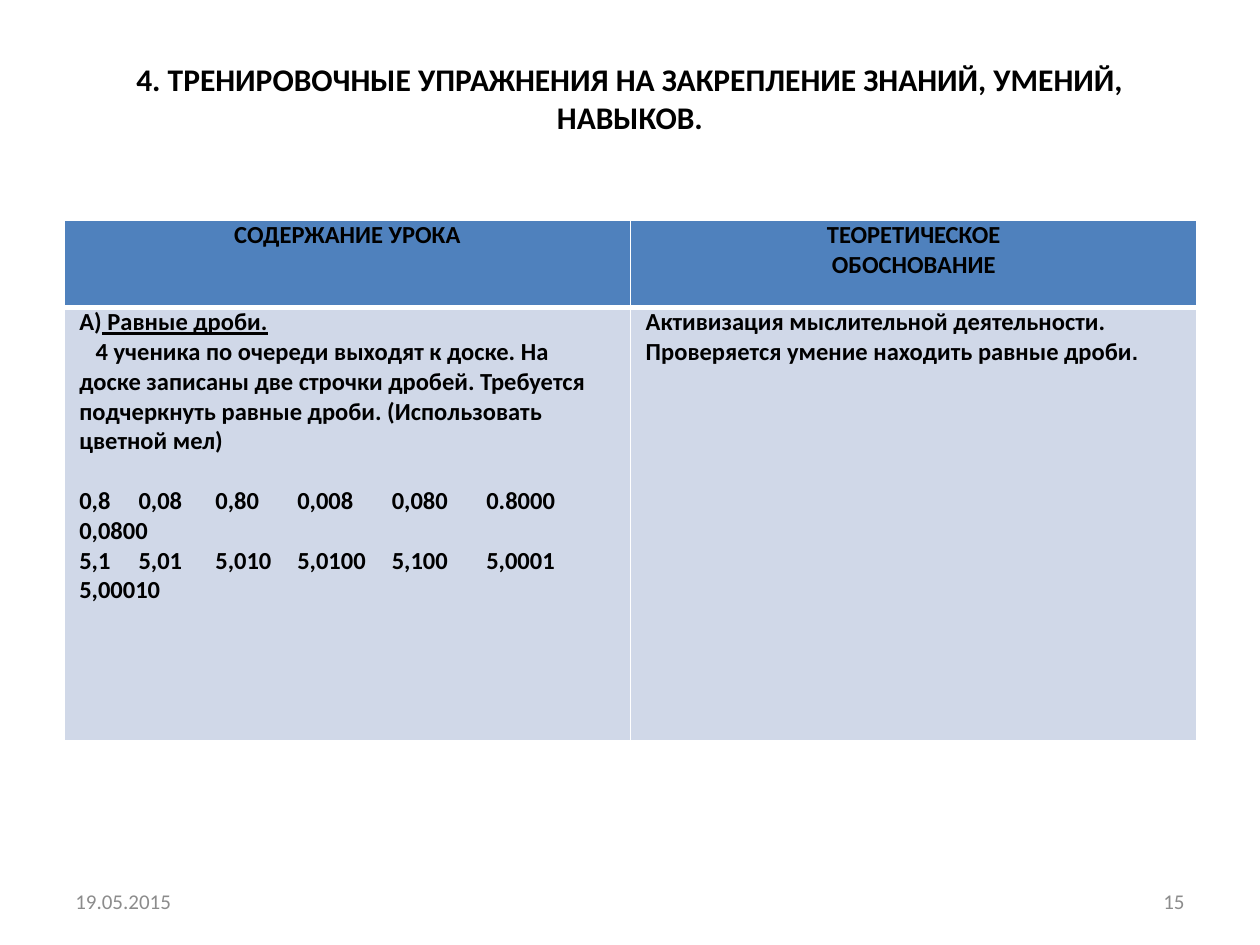
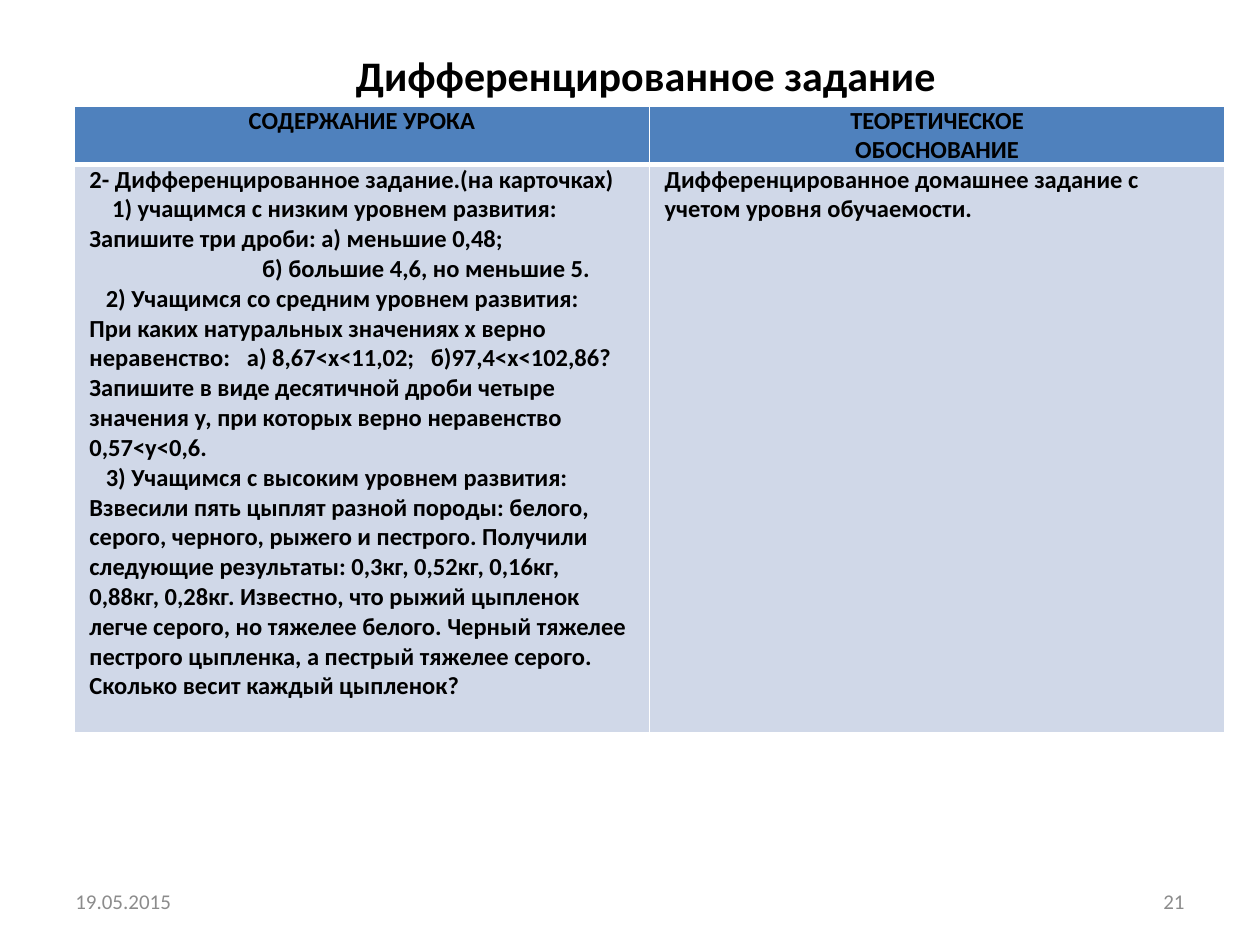
from dataclasses import dataclass

from lxml.etree import SubElement
from pptx import Presentation
from pptx.dml.color import RGBColor
from pptx.enum.text import MSO_ANCHOR as Anchor, PP_ALIGN as Align
from pptx.oxml.ns import qn
from pptx.util import Inches, Pt


@dataclass(frozen=True)
class Theme:
    font: str = "Calibri"
    stop_font: str = "Arial"
    ink: str = "000000"
    muted: str = "8C8C8C"
    header_fill: str = "4F81BD"
    body_fill: str = "D0D8E8"
    border: str = "FFFFFF"
    body_size: int = 14
    footer_size: int = 12
    thin: int = 1
    thick: int = 3


THEME = Theme()
DATE = "19.05.2015"
HEADERS = (("СОДЕРЖАНИЕ УРОКА",), ("ТЕОРЕТИЧЕСКОЕ", "ОБОСНОВАНИЕ"))
FRACTION_TABS = (0.47, 1.08, 1.73, 2.48, 3.23)
INEQUALITY_TABS = (1.25, 2.71)


@dataclass(frozen=True)
class Line:
    """One paragraph: its text, spacing and an optional run at its end."""
    text: str
    indent: float = 0
    before: int = 0
    tabs: tuple = ()
    underlined: str = ""
    small_stop: str = ""


def style_run(run, size, color=THEME.ink, bold=False, font=THEME.font):
    run.font.name = font
    run.font.size = Pt(size)
    run.font.bold = bold
    run.font.color.rgb = RGBColor.from_string(color)


def add_text(slide, box, text, size, color=THEME.ink, bold=False,
             align=Align.LEFT, bottom_inset=0.05):
    shape = slide.shapes.add_textbox(*map(Inches, box))
    frame = shape.text_frame
    frame.word_wrap = True
    frame.vertical_anchor = Anchor.MIDDLE
    frame.margin_bottom = Inches(bottom_inset)
    frame.text = text
    paragraph = frame.paragraphs[0]
    paragraph.alignment = align
    for run in paragraph.runs:
        style_run(run, size, color, bold)


def add_footer(slide, number, box=(0.5, 6.95, 9, 0.4)):
    left, top, width, height = box
    field = 2.33
    for x, text, align in ((left, DATE, Align.LEFT),
                           (left + width - field, number, Align.RIGHT)):
        add_text(slide, (x, top, field, height), text,
                 THEME.footer_size, THEME.muted, align=align)


def set_borders(cell, **widths):
    properties = cell._tc.get_or_add_tcPr()
    for position, side in enumerate("LRTB"):
        line = SubElement(properties, qn(f"a:ln{side}"),
                          w=str(Pt(widths.get(side, THEME.thin))))
        fill = SubElement(line, qn("a:solidFill"))
        SubElement(fill, qn("a:srgbClr"), val=THEME.border)
        properties.insert(position, line)


def write_line(paragraph, line, align):
    properties = paragraph._p.get_or_add_pPr()
    if line.indent:
        properties.set("marL", "0")
        properties.set("indent", str(Inches(line.indent)))
    if line.tabs:
        tab_list = SubElement(properties, qn("a:tabLst"))
        for stop in line.tabs:
            SubElement(tab_list, qn("a:tab"), pos=str(Inches(stop)), algn="l")
    paragraph.alignment = align
    if line.before:
        paragraph.space_before = Pt(line.before)
    paragraph.text = line.text
    for run in paragraph.runs:
        style_run(run, THEME.body_size, bold=True)
    if line.underlined:
        run = paragraph.add_run()
        run.text = line.underlined
        style_run(run, THEME.body_size, bold=True)
        run.font.underline = True
    if line.small_stop:
        run = paragraph.add_run()
        run.text = line.small_stop
        style_run(run, THEME.footer_size, bold=True, font=THEME.stop_font)


def fill_cell(cell, lines, fill, side_inset, align=Align.LEFT):
    cell.margin_left = cell.margin_right = Inches(side_inset)
    cell.margin_top = cell.margin_bottom = 0
    cell.fill.solid()
    cell.fill.fore_color.rgb = RGBColor.from_string(fill)
    frame = cell.text_frame
    for index, line in enumerate(lines):
        paragraph = frame.add_paragraph() if index else frame.paragraphs[0]
        write_line(paragraph, line, align)


def add_lesson_table(slide, box, header_height, columns):
    height = box[3]
    table = slide.shapes.add_table(2, len(columns), *map(Inches, box)).table
    table.first_row = table.horz_banding = False
    table.rows[0].height = Inches(header_height)
    table.rows[1].height = Inches(height - header_height)
    for index, (header, lines) in enumerate(zip(HEADERS, columns)):
        top, body = table.cell(0, index), table.cell(1, index)
        fill_cell(top, [Line(text) for text in header],
                  THEME.header_fill, 0.07, Align.CENTER)
        set_borders(top, B=THEME.thick)
        fill_cell(body, lines, THEME.body_fill, 0.12)
        set_borders(body, T=THEME.thick)


def add_lesson_slide(presentation, number, title, title_box, title_size,
                     table_box, header_height, columns, title_inset=0.05):
    slide = presentation.slides.add_slide(presentation.slide_layouts[6])
    add_lesson_table(slide, table_box, header_height, columns)
    add_footer(slide, number)
    add_text(slide, title_box, title, title_size, bold=True,
             align=Align.CENTER, bottom_inset=title_inset)


# Lesson content, one list of lines per table column
EXERCISES = (
    [
        Line("А)", underlined=" Равные дроби."),
        Line("4 ученика по очереди выходят к доске. На доске записаны две "
             "строчки дробей. Требуется подчеркнуть равные дроби. "
             "(Использовать цветной мел)", indent=0.13),
        Line("0,8\t0,08\t0,80\t0,008\t0,080\t0.8000\v0,0800",
             before=17, tabs=FRACTION_TABS),
        Line("5,1\t5,01\t5,010\t5,0100\t5,100\t5,0001\v5,00010",
             tabs=FRACTION_TABS),
    ],
    [Line("Активизация мыслительной деятельности. Проверяется умение "
          "находить равные дроби", small_stop=".")],
)
HOMEWORK = (
    [
        Line("2- Дифференцированное задание.(на карточках)"),
        Line("1) учащимся с низким уровнем развития:", indent=0.18),
        Line("Запишите три дроби: а) меньшие 0,48;"),
        Line("б) большие 4,6, но меньшие 5.", indent=1.37),
        Line("2) Учащимся со средним уровнем развития:", indent=0.13),
        Line("При каких натуральных значениях х верно неравенство:"
             "\tа) 8,67<x<11,02;\tб)97,4<x<102,86?", tabs=INEQUALITY_TABS),
        Line("Запишите в виде десятичной дроби четыре значения у, "
             "при которых верно неравенство"),
        Line("0,57<y<0,6."),
        Line("3) Учащимся с высоким уровнем развития:", indent=0.13),
        Line("Взвесили пять цыплят разной породы: белого, серого, черного, "
             "рыжего и пестрого. Получили следующие результаты: 0,3кг, "
             "0,52кг, 0,16кг, 0,88кг, 0,28кг. Известно, что рыжий цыпленок "
             "легче серого, но тяжелее белого. Черный тяжелее пестрого "
             "цыпленка, а пестрый тяжелее серого. Сколько весит каждый "
             "цыпленок?"),
    ],
    [Line("Дифференцированное домашнее задание с учетом уровня "
          "обучаемости.")],
)


def main():
    presentation = Presentation()
    presentation.slide_width = Inches(10)
    presentation.slide_height = Inches(7.5)

    # Training exercises
    add_lesson_slide(
        presentation, "15",
        "4. ТРЕНИРОВОЧНЫЕ УПРАЖНЕНИЯ НА ЗАКРЕПЛЕНИЕ ЗНАНИЙ, УМЕНИЙ, НАВЫКОВ.",
        (0.5, 0.3, 9, 1.25), 18, (0.51, 1.75, 8.99, 4.13), 0.69,
        EXERCISES, title_inset=0.35)

    # Homework by level
    add_lesson_slide(
        presentation, "21", "Дифференцированное задание",
        (0.75, 0.29, 8.75, 0.61), 24, (0.59, 0.84, 9.13, 4.97), 0.46,
        HOMEWORK)

    presentation.save("out.pptx")


if __name__ == "__main__":
    main()
